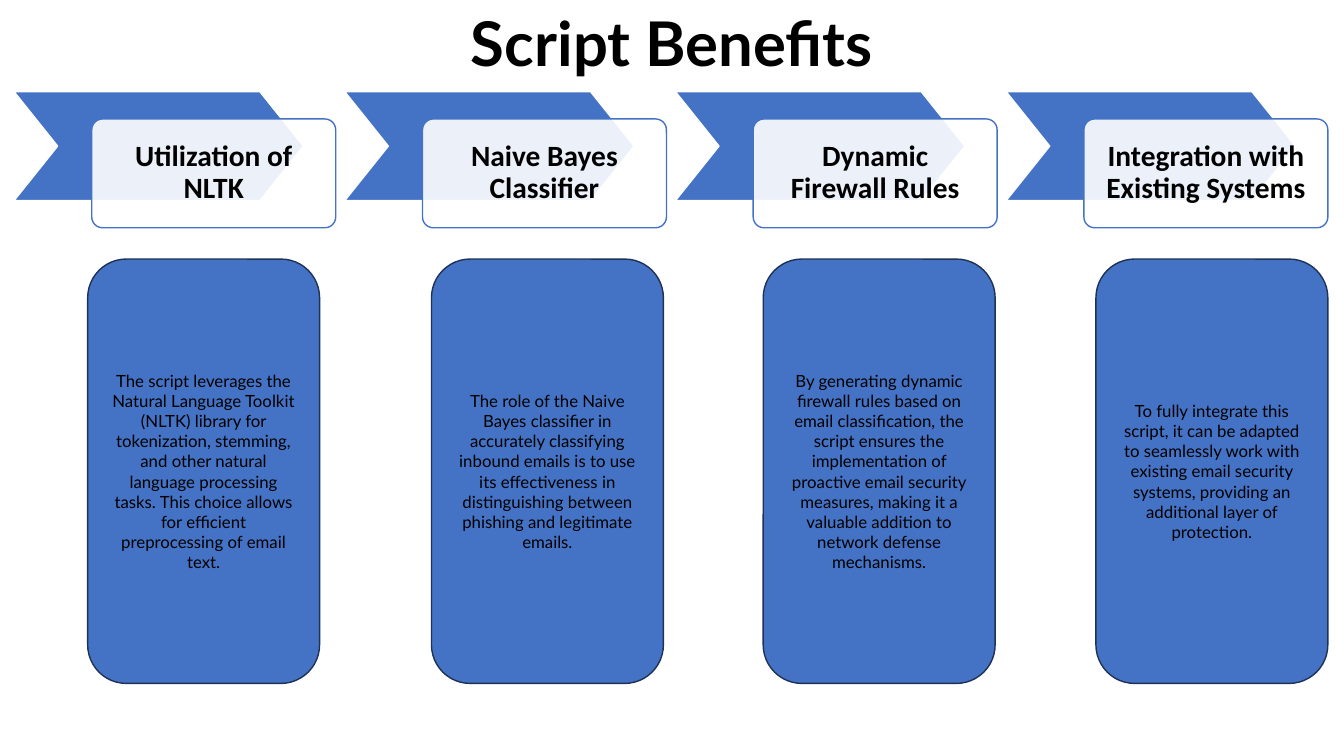
import pptx
import pptx.dml.color
import pptx.enum.shapes
import pptx.enum.text
import pptx.oxml
import pptx.oxml.ns
import pptx.util
from pptx.util import Inches

SHAPES = pptx.enum.shapes.MSO_SHAPE
BLUE, NAVY, WHITE, BLACK = "4472C4", "1E3256", "FFFFFF", "000000"
STEP_PITCH = 3.28

# heading, left edge of the description card, description
BENEFITS = [
    ("Utilization of NLTK", 0.87,
     "The script leverages the Natural Language Toolkit (NLTK) library for "
     "tokenization, stemming, and other natural language processing tasks. "
     "This choice allows for efficient preprocessing of email text."),
    ("Naive Bayes Classifier", 4.28,
     "The role of the Naive Bayes classifier in accurately classifying inbound "
     "emails is to use its effectiveness in distinguishing between phishing "
     "and legitimate emails."),
    ("Dynamic Firewall Rules", 7.57,
     "By generating dynamic firewall rules based on email classification, the "
     "script ensures the implementation of proactive email security measures, "
     "making it a valuable addition to network defense mechanisms."),
    ("Integration with Existing Systems", 10.87,
     "To fully integrate this script, it can be adapted to seamlessly work with "
     "existing email security systems, providing an additional layer of "
     "protection."),
]


def rgb(hex_color):
    return pptx.dml.color.RGBColor.from_string(hex_color)


def add_box(slide, preset, left, top, width, height, fill, line, adjustment=None):
    box = slide.shapes.add_shape(
        preset, Inches(left), Inches(top), Inches(width), Inches(height))
    box.shadow.inherit = False
    box.fill.solid()
    box.fill.fore_color.rgb = rgb(fill)
    box.line.color.rgb = rgb(line)
    box.line.width = pptx.util.Pt(1)
    if adjustment is not None:
        box.adjustments[0] = adjustment
    return box


def set_opacity(box, percent):
    color = box.fill._xPr.find(".//" + pptx.oxml.ns.qn("a:srgbClr"))
    alpha = pptx.oxml.parse_xml(
        f'<a:alpha {pptx.oxml.ns.nsdecls("a")} val="{percent * 1000}"/>')
    color.append(alpha)


def write_centered(box, text, font, size, bold=False):
    """Put one centred paragraph in the box and return the paragraph."""
    box.text_frame.word_wrap = True
    paragraph = box.text_frame.paragraphs[0]
    paragraph.alignment = pptx.enum.text.PP_ALIGN.CENTER
    run = paragraph.add_run()
    run.text = text
    run.font.name = font
    run.font.size = pptx.util.Pt(size)
    run.font.bold = bold
    run.font.color.rgb = rgb(BLACK)
    return paragraph


def add_title(slide, text):
    title = slide.shapes.add_textbox(
        Inches(0.39), Inches(0), Inches(12.55), Inches(0.84))
    write_centered(title, text, "Lato", 44, bold=True)


def add_step(slide, left, heading):
    """Draw a chevron with its heading label overlapping it."""
    add_box(slide, SHAPES.CHEVRON, left, 0.91, 2.87, 1.08, BLUE, WHITE, 0.4)
    label = add_box(slide, SHAPES.ROUNDED_RECTANGLE, left + 0.77, 1.18,
                    2.42, 1.08, WHITE, BLUE, 0.1)
    set_opacity(label, 90)
    frame = label.text_frame
    frame.vertical_anchor = pptx.enum.text.MSO_ANCHOR.MIDDLE
    frame.margin_left = frame.margin_right = Inches(0.16)
    frame.margin_top = frame.margin_bottom = Inches(0.16)
    paragraph = write_centered(label, heading, "Calibri", 21, bold=True)
    paragraph.line_spacing = 0.9


def add_card(slide, left, description):
    card = add_box(slide, SHAPES.ROUNDED_RECTANGLE, left, 2.57, 2.3, 4.21,
                   BLUE, NAVY)
    card.text_frame.vertical_anchor = pptx.enum.text.MSO_ANCHOR.MIDDLE
    write_centered(card, description, "Lato", 12)


def main():
    deck = pptx.Presentation()
    deck.slide_width, deck.slide_height = Inches(13.33), Inches(7.5)
    slide = deck.slides.add_slide(deck.slide_layouts[6])
    add_title(slide, "Script Benefits")
    for index, (heading, card_left, description) in enumerate(BENEFITS):
        add_step(slide, 0.14 + index * STEP_PITCH, heading)
        add_card(slide, card_left, description)
    deck.save("out.pptx")


if __name__ == "__main__":
    main()
